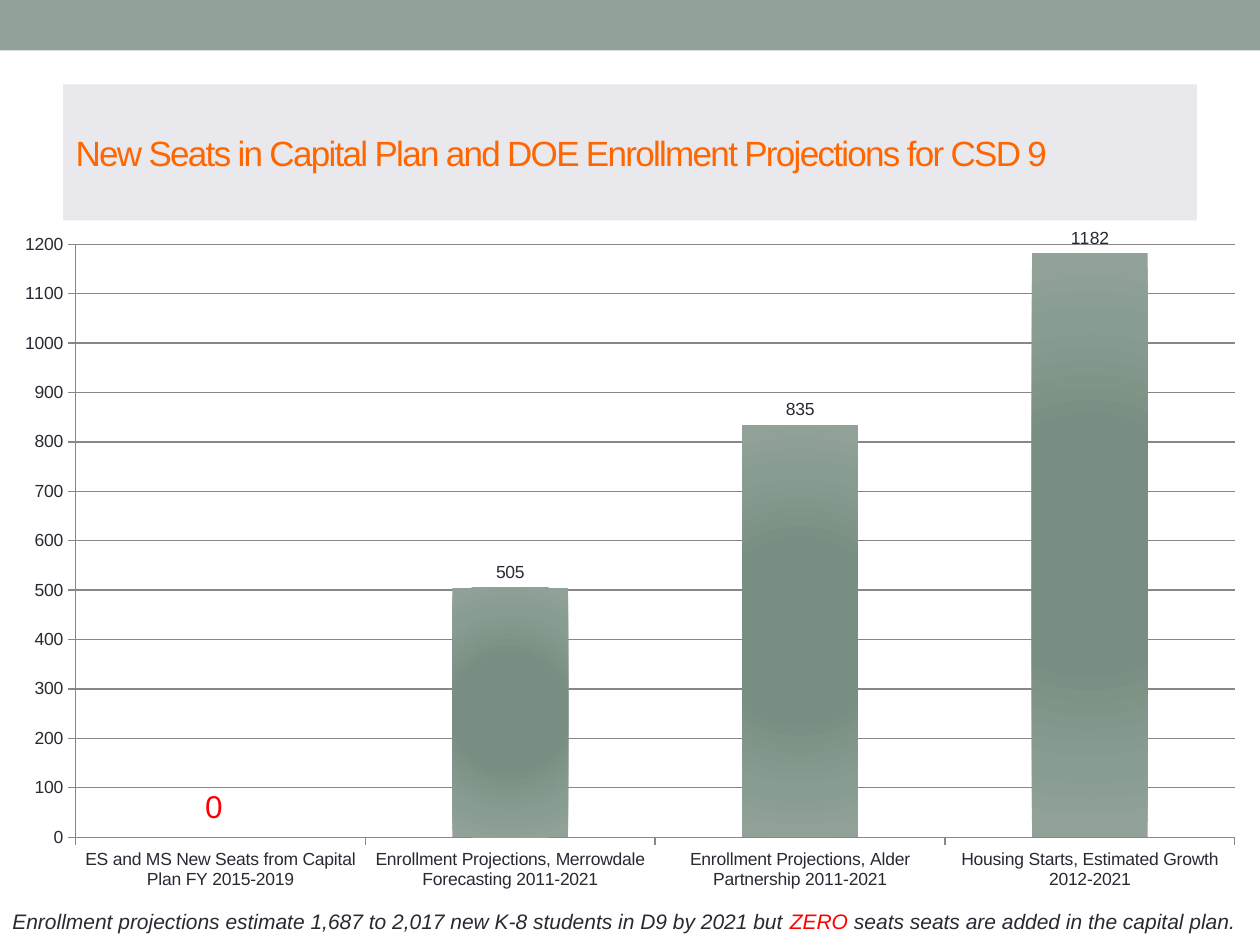
import pptx
import pptx.chart.data
import pptx.dml.color
import pptx.enum.chart
import pptx.enum.shapes
import pptx.enum.text
import pptx.oxml
import pptx.oxml.ns
import pptx.util

Inches = pptx.util.Inches
Pt = pptx.util.Pt
RGB = pptx.dml.color.RGBColor
SAGE = RGB(0x93, 0xA2, 0x99)
PALE = RGB(0xE8, 0xE8, 0xED)
ORANGE = RGB(0xFF, 0x66, 0x00)
INK = RGB(0x29, 0x29, 0x34)
RED = RGB(0xFF, 0x00, 0x00)
GRAY = RGB(0x87, 0x87, 0x87)
FONT = "Arial"


def add_run(para, text, size, color, slant=False):
    run = para.add_run()
    run.text = text
    run.font.name = FONT
    run.font.size = Pt(size)
    run.font.color.rgb = color
    run.font.italic = slant
    return run


def add_note(left, top, width, height):
    box = slide.shapes.add_textbox(Inches(left), Inches(top), Inches(width), Inches(height))
    box.text_frame.word_wrap = False
    box.text_frame.auto_size = pptx.enum.text.MSO_AUTO_SIZE.SHAPE_TO_FIT_TEXT
    return box.text_frame.paragraphs[0]


deck = pptx.Presentation()
deck.slide_width = Inches(10)
deck.slide_height = Inches(7.5)
slide = deck.slides.add_slide(deck.slide_layouts[5])

band = slide.shapes.add_shape(
    pptx.enum.shapes.MSO_SHAPE.RECTANGLE, 0, 0, Inches(10), Inches(0.4))
band.shadow.inherit = False
band.fill.solid()
band.fill.fore_color.rgb = SAGE
band.line.fill.background()

title = slide.shapes.title
title.left, title.top = Inches(0.5), Inches(0.67)
title.width, title.height = Inches(9), Inches(1.08)
title.fill.solid()
title.fill.fore_color.rgb = PALE
title.text_frame.vertical_anchor = pptx.enum.text.MSO_ANCHOR.MIDDLE
head = title.text_frame.paragraphs[0]
head.alignment = pptx.enum.text.PP_ALIGN.LEFT
run = add_run(head, "New Seats in Capital Plan and DOE Enrollment Projections for CSD 9",
              20, ORANGE)
run.font._element.set("spc", "-100")

note = add_note(0, 7.16, 10, 0.3)
for text, color in [
    ("Enrollment projections estimate 1,687 to 2,017 new K-8 students in D9 by 2021 but ", INK),
    ("ZERO", RED),
    (" seats seats are added in the capital plan.", INK),
]:
    add_run(note, text, 12, color, True)

data = pptx.chart.data.CategoryChartData()
data.categories = [
    "ES and MS New Seats from Capital Plan FY 2015-2019",
    "Enrollment Projections, Merrowdale Forecasting 2011-2021",
    "Enrollment Projections, Alder Partnership 2011-2021",
    "Housing Starts, Estimated Growth 2012-2021",
]
data.add_series("Series 1", [None, 505, 835, 1182])
chart = slide.shapes.add_chart(
    pptx.enum.chart.XL_CHART_TYPE.COLUMN_CLUSTERED,
    0, Inches(1.75), Inches(10), Inches(5.41), data).chart
chart.has_legend = False
chart.has_title = False
chart.font.name = FONT
chart.font.size = Pt(10)
chart.font.color.rgb = INK

scale = chart.value_axis
scale.minimum_scale = 0
scale.maximum_scale = 1200
scale.major_unit = 100
scale.has_major_gridlines = True
scale.major_gridlines.format.line.color.rgb = GRAY
for axis in (scale, chart.category_axis):
    axis.major_tick_mark = pptx.enum.chart.XL_TICK_MARK.OUTSIDE
    axis.format.line.color.rgb = GRAY

plot = chart.plots[0]
plot.gap_width = 150
plot.vary_by_categories = False
plot.has_data_labels = True
plot.data_labels.show_value = True
plot.data_labels.position = pptx.enum.chart.XL_LABEL_POSITION.OUTSIDE_END

bars = plot.series[0]
bars.format.fill.solid()
bars.format.fill.fore_color.rgb = SAGE
flat = bars._element.spPr.find(pptx.oxml.ns.qn("a:solidFill"))
glow = pptx.oxml.parse_xml(
    f'<a:gradFill {pptx.oxml.ns.nsdecls("a")} rotWithShape="1"><a:gsLst>'
    '<a:gs pos="0"><a:srgbClr val="798E82"/></a:gs>'
    '<a:gs pos="40000"><a:srgbClr val="798E82"/></a:gs>'
    '<a:gs pos="75000"><a:srgbClr val="899C91"/></a:gs>'
    f'<a:gs pos="100000"><a:srgbClr val="{SAGE}"/></a:gs></a:gsLst>'
    '<a:path path="circle"><a:fillToRect l="50000" t="50000" r="50000" b="50000"/></a:path>'
    '</a:gradFill>')
flat.getparent().replace(flat, glow)

area = chart._chartSpace.chart.plotArea
for old in area.findall(pptx.oxml.ns.qn("c:layout")):
    area.remove(old)
area.insert(0, pptx.oxml.parse_xml(
    f'<c:layout {pptx.oxml.ns.nsdecls("c")}><c:manualLayout>'
    '<c:layoutTarget val="inner"/><c:xMode val="edge"/><c:yMode val="edge"/>'
    '<c:x val="0.06"/><c:y val="0.035"/><c:w val="0.92"/><c:h val="0.87"/>'
    '</c:manualLayout></c:layout>'))

add_run(add_note(1.53, 6.2, 0.34, 0.4), "0", 18, RED)

deck.save("out.pptx")
